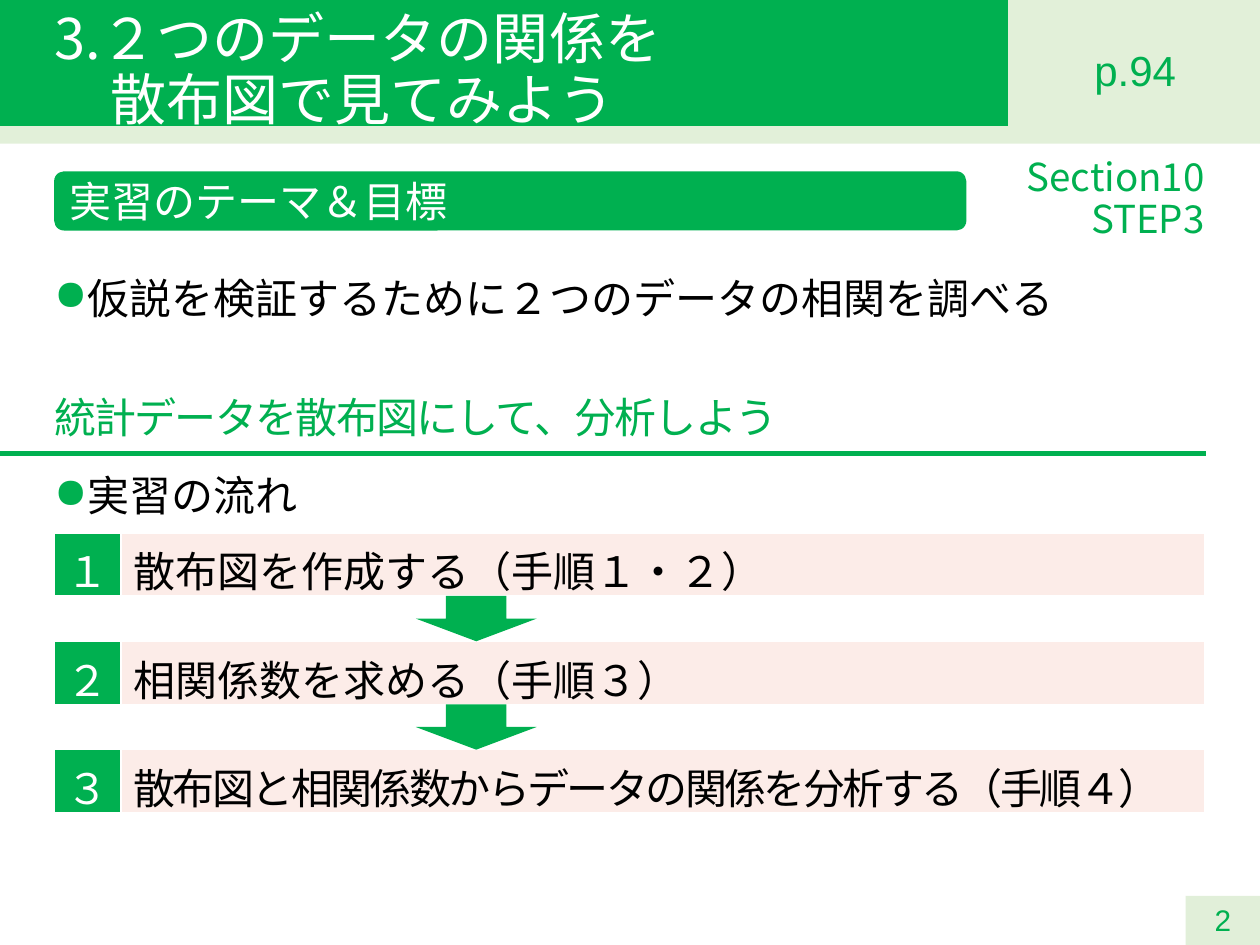
"""Build the lesson slide that introduces the scatter plot exercise."""
from dataclasses import dataclass

import lxml.etree
import pptx
import pptx.dml.color
import pptx.enum.shapes
import pptx.enum.text
import pptx.oxml.ns
import pptx.util

Inches = pptx.util.Inches
Pt = pptx.util.Pt
Shape = pptx.enum.shapes.MSO_SHAPE
Align = pptx.enum.text.PP_ALIGN
Anchor = pptx.enum.text.MSO_ANCHOR
qn = pptx.oxml.ns.qn


@dataclass(frozen=True)
class Theme:
    green: str = "00B050"
    pale_green: str = "E2F0D9"
    footer_green: str = "C5E0B4"
    pink: str = "FCECE8"
    white: str = "FFFFFF"
    black: str = "000000"
    japanese: str = "Noto Sans CJK JP"
    latin: str = "Arial"
    title: float = 32
    body: float = 24
    section: float = 22
    number: float = 17
    left: float = 0.43
    width: float = 9.13


THEME = Theme()


@dataclass(frozen=True)
class Style:
    size: float = THEME.body
    color: str = THEME.green
    font: str = THEME.japanese
    align: Align = Align.LEFT
    line: float = 1.0
    before: float = 0
    hanging: float = 0
    bullet: str = ""
    spacing: float = 0


@dataclass(frozen=True)
class TextBlock:
    lines: tuple[str, ...]
    place: tuple[float, float, float, float]
    style: Style
    top_inset: float = 0.05
    bottom_inset: float = 0.05
    anchor: Anchor = Anchor.TOP
    grows: bool = True


@dataclass(frozen=True)
class Step:
    number: str
    label: str
    spacing: float = 0


def rgb(color: str) -> pptx.dml.color.RGBColor:
    return pptx.dml.color.RGBColor.from_string(color)


def paint(target, color: str) -> None:
    target.fill.solid()
    target.fill.fore_color.rgb = rgb(color)


def style_paragraph(para, style: Style) -> None:
    para.alignment = style.align
    para.line_spacing = style.line
    para.space_before = Pt(style.before)
    para.font.size = Pt(style.size)
    para.font.color.rgb = rgb(style.color)
    para.font.name = style.font
    properties = para._p.get_or_add_pPr()
    defaults = properties.find(qn("a:defRPr"))
    lxml.etree.SubElement(defaults, qn("a:ea"), typeface=style.font)
    if style.spacing:
        defaults.set("spc", str(round(style.spacing * 100)))
    if style.hanging:
        properties.set("marL", str(Inches(style.hanging)))
        properties.set("indent", str(-Inches(style.hanging)))
    if style.bullet:
        bullet_color = lxml.etree.Element(qn("a:buClr"))
        lxml.etree.SubElement(bullet_color, qn("a:srgbClr"), val=THEME.green)
        defaults.addprevious(bullet_color)
        defaults.addprevious(lxml.etree.Element(qn("a:buChar"), char=style.bullet))


def write(frame, lines: tuple[str, ...], style: Style) -> None:
    frame.text = "\n".join(lines)
    for para in frame.paragraphs:
        style_paragraph(para, style)


def add_text(page, block: TextBlock) -> None:
    box = page.shapes.add_textbox(*map(Inches, block.place))
    frame = box.text_frame
    frame.word_wrap = True
    frame.margin_left = frame.margin_right = 0
    frame.margin_top = Inches(block.top_inset)
    frame.margin_bottom = Inches(block.bottom_inset)
    frame.vertical_anchor = block.anchor
    if block.grows:
        frame.auto_size = pptx.enum.text.MSO_AUTO_SIZE.SHAPE_TO_FIT_TEXT
    write(frame, block.lines, block.style)


def finish_shape(shape, color: str) -> None:
    shape.shadow.inherit = False
    paint(shape, color)
    shape.line.fill.background()


def add_block(page, kind: Shape, place: tuple[float, float, float, float], color: str):
    shape = page.shapes.add_shape(kind, *map(Inches, place))
    finish_shape(shape, color)
    return shape


def add_backdrop(page) -> None:
    footer = add_block(page, Shape.RECTANGLE, (9.41, 7.11, 0.59, 0.39), THEME.footer_green)
    color = footer.fill._xPr.find(".//" + qn("a:srgbClr"))
    lxml.etree.SubElement(color, qn("a:alpha"), val="50000")
    add_block(page, Shape.RECTANGLE, (0, 0, 10, 1.14), THEME.pale_green)
    banner = page.shapes.build_freeform(0, 0, scale=Inches(1))
    banner.add_line_segments([(7.88, 0), (8.48, 1.14), (0, 1.14)], close=True)
    finish_shape(banner.convert_to_shape(), THEME.green)


def set_borders(cell) -> None:
    properties = cell._tc.get_or_add_tcPr()
    for index, side in enumerate(("lnL", "lnR", "lnT", "lnB")):
        border = lxml.etree.Element(qn(f"a:{side}"), w=str(Pt(1)))
        fill = lxml.etree.SubElement(border, qn("a:solidFill"))
        lxml.etree.SubElement(fill, qn("a:srgbClr"), val=THEME.white)
        properties.insert(index, border)


def add_step(page, step: Step, top: float) -> None:
    place = (THEME.left, top, THEME.width, 0.5)
    table = page.shapes.add_table(1, 2, *map(Inches, place)).table
    table.first_row = table.horz_banding = False
    cells = (
        (step.number, 0.53, THEME.green, Style(color=THEME.white)),
        (step.label, 8.6, THEME.pink, Style(color=THEME.black, spacing=step.spacing)),
    )
    for column, (text, width, color, style) in enumerate(cells):
        table.columns[column].width = Inches(width)
        cell = table.cell(0, column)
        paint(cell, color)
        set_borders(cell)
        write(cell.text_frame, (text,), style)


def add_steps(page, steps: tuple[Step, ...], top: float, pitch: float) -> None:
    for index, step in enumerate(steps):
        add_step(page, step, top + index * pitch)
    for index in range(len(steps) - 1):
        place = (3.3, top + 0.5 + index * pitch, 0.96, pitch - 0.5)
        add_block(page, Shape.DOWN_ARROW, place, THEME.green)


def add_rule(page) -> None:
    ends = map(Inches, (0, 3.6, 9.57, 3.6))
    rule = page.shapes.add_connector(pptx.enum.shapes.MSO_CONNECTOR.STRAIGHT, *ends)
    rule.line.color.rgb = rgb(THEME.green)
    rule.line.width = Pt(3)
    lxml.etree.SubElement(rule._element.spPr, qn("a:effectLst"))


def main() -> None:
    deck = pptx.Presentation()
    deck.slide_width, deck.slide_height = Inches(10), Inches(7.5)
    page = deck.slides.add_slide(deck.slide_layouts[6])
    add_backdrop(page)
    title = Style(THEME.title, THEME.white, line=0.9, hanging=0.45)
    number = Style(THEME.number, font=THEME.latin, align=Align.CENTER)
    section = Style(THEME.section, align=Align.RIGHT, line=0.9)
    reference = Style(font=THEME.latin, align=Align.CENTER, line=0.9, before=10)
    goal = Style(color=THEME.black, align=Align.JUSTIFY, line=1.5, hanging=0.25, bullet="●")
    flow = Style(color=THEME.black, align=Align.JUSTIFY, line=0.9, hanging=0.25, bullet="●")
    heading = Style(line=0.9, before=10, spacing=-1)
    left, width = THEME.left, THEME.width
    for block in (
        TextBlock(("3.２つのデータの関係を\v散布図で見てみよう",), (left, 0, 8.03, 1.14), title, 0, 0, Anchor.MIDDLE, False),
        TextBlock(("2",), (9.41, 7.1, 0.59, 0.4), number, anchor=Anchor.MIDDLE, grows=False),
        TextBlock(("Section10", "STEP3"), (7.1, 1.21, 2.46, 0.46), section),
        TextBlock(("p.94",), (8.46, 0.35, 1.1, 0.46), reference),
        TextBlock(("仮説を検証するために２つのデータの相関を調べる",), (left, 1.96, 8.32, 0.66), goal, 0),
        TextBlock(("実習の流れ",), (left, 3.77, width, 0.41), flow, 0),
        TextBlock(("統計データを散布図にして、分析しよう",), (left, 3.1, width, 0.46), heading),
    ):
        add_text(page, block)
    steps = (
        Step("１", "散布図を作成する（手順１・２）"),
        Step("２", "相関係数を求める（手順３）"),
        Step("３", "散布図と相関係数からデータの関係を分析する（手順４）", -1.5),
    )
    add_steps(page, steps, top=4.23, pitch=0.86)
    add_rule(page)
    theme_label = add_block(page, Shape.ROUNDED_RECTANGLE, (left, 1.36, 7.24, 0.47), THEME.green)
    theme_label.text_frame.vertical_anchor = Anchor.MIDDLE
    write(theme_label.text_frame, ("実習のテーマ＆目標",), Style(color=THEME.white))
    deck.save("out.pptx")


if __name__ == "__main__":
    main()
